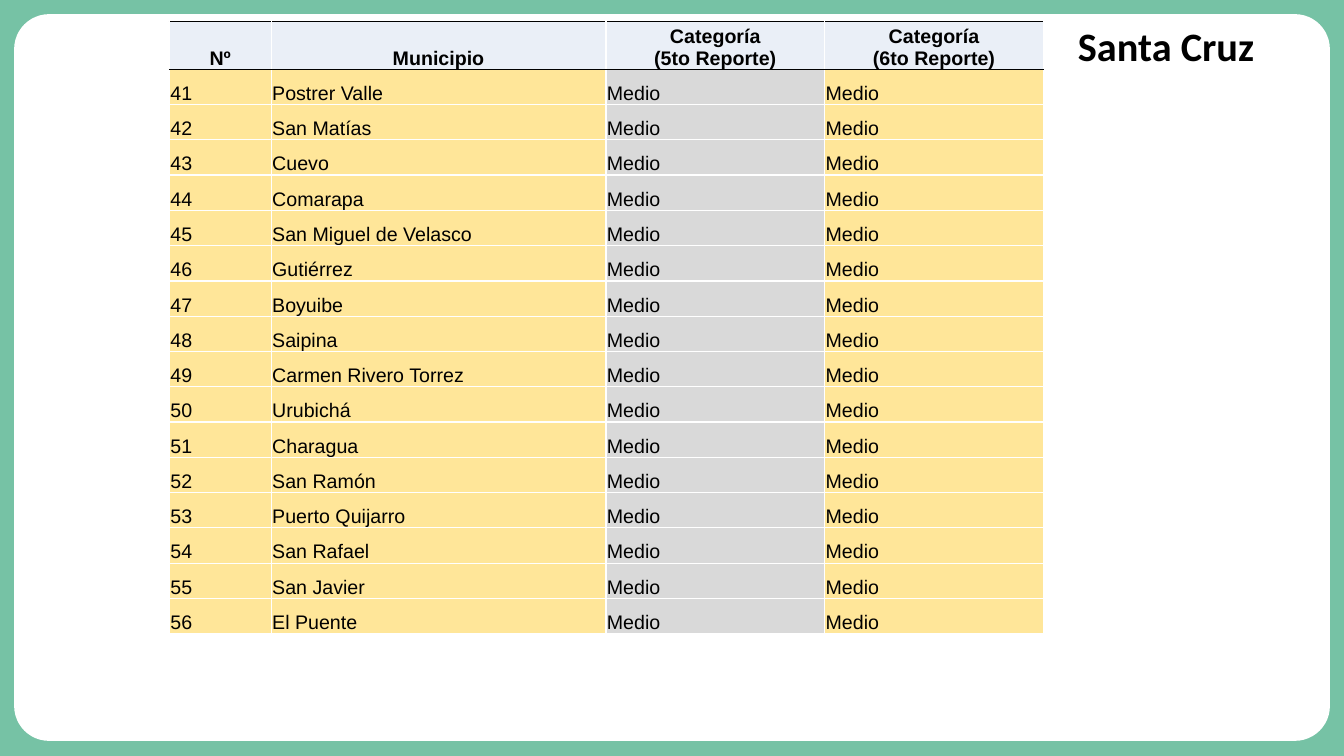
from lxml import etree
from pptx import Presentation
from pptx.dml.color import RGBColor
from pptx.enum.shapes import MSO_SHAPE
from pptx.enum.text import MSO_ANCHOR, PP_ALIGN
from pptx.oxml.ns import qn
from pptx.util import Inches, Pt

ROUNDED = MSO_SHAPE.ROUNDED_RECTANGLE
BOTTOM, MIDDLE = MSO_ANCHOR.BOTTOM, MSO_ANCHOR.MIDDLE
LEFT, CENTER = PP_ALIGN.LEFT, PP_ALIGN.CENTER

GREEN = RGBColor(0x76, 0xC2, 0xA5)
WHITE = RGBColor(0xFF, 0xFF, 0xFF)
BLACK = RGBColor(0x00, 0x00, 0x00)
PALE_BLUE = RGBColor(0xEA, 0xEF, 0xF7)
YELLOW = RGBColor(0xFF, 0xE6, 0x99)
GRAY = RGBColor(0xD9, 0xD9, 0xD9)

HEADERS = ["Nº", "Municipio", "Categoría\n(5to Reporte)", "Categoría\n(6to Reporte)"]
FIRST_NUMBER = 41
MUNICIPALITIES = [
    "Postrer Valle", "San Matías", "Cuevo", "Comarapa",
    "San Miguel de Velasco", "Gutiérrez", "Boyuibe", "Saipina",
    "Carmen Rivero Torrez", "Urubichá", "Charagua", "San Ramón",
    "Puerto Quijarro", "San Rafael", "San Javier", "El Puente",
]
COLUMN_WIDTHS = [1.01, 3.32, 2.17, 2.17]
COLUMN_FILLS = [YELLOW, YELLOW, GRAY, YELLOW]
HEADER_HEIGHT, ROW_HEIGHT = 0.44, 0.35


def add_text(para, text, font, size, bold, align):
    para.alignment = align
    span = para.add_run()
    span.text = text
    span.font.name = font
    span.font.size = Pt(size)
    span.font.bold = bold
    span.font.color.rgb = BLACK


def set_border(cell, side, color):
    line = etree.SubElement(cell._tc.get_or_add_tcPr(), qn(f"a:ln{side}"), w=str(Pt(1)))
    fill = etree.SubElement(line, qn("a:solidFill"))
    etree.SubElement(fill, qn("a:srgbClr"), val=str(color))


deck = Presentation()
deck.slide_width, deck.slide_height = Inches(13.33), Inches(7.5)
page = deck.slides.add_slide(deck.slide_layouts[6])

# Green background with a white rounded panel
page.background.fill.solid()
page.background.fill.fore_color.rgb = GREEN
panel = page.shapes.add_shape(ROUNDED, Inches(0.14), Inches(0.14), Inches(13.05), Inches(7.21))
panel.adjustments[0] = 0.048
panel.shadow.inherit = False
panel.fill.solid()
panel.fill.fore_color.rgb = WHITE
panel.line.fill.background()

# Title
title = page.shapes.add_textbox(Inches(10.34), Inches(0.21), Inches(2.45), Inches(0.55))
title.text_frame.word_wrap = True
title.text_frame.vertical_anchor = MIDDLE
title_para = title.text_frame.paragraphs[0]
title_para.line_spacing = 0.9
add_text(title_para, "Santa Cruz", "Calibri", 28.8, True, CENTER)

# Table of municipalities
rows = [HEADERS]
for number, name in enumerate(MUNICIPALITIES, FIRST_NUMBER):
    rows.append([str(number), name, "Medio", "Medio"])
table_height = HEADER_HEIGHT + ROW_HEIGHT * len(MUNICIPALITIES)
table = page.shapes.add_table(
    len(rows), len(HEADERS), Inches(1.68), Inches(0.21),
    Inches(sum(COLUMN_WIDTHS)), Inches(table_height)).table
table.horz_banding = False
for column, width in zip(table.columns, COLUMN_WIDTHS):
    column.width = Inches(width)

for r, texts in enumerate(rows):
    is_header = r == 0
    table.rows[r].height = Inches(HEADER_HEIGHT if is_header else ROW_HEIGHT)
    for c, text in enumerate(texts):
        cell = table.cell(r, c)
        cell.vertical_anchor = BOTTOM
        cell.margin_left = cell.margin_right = cell.margin_top = Inches(0.01)
        cell.margin_bottom = 0

        # Black rules above and below the header, white ones elsewhere
        set_border(cell, "L", WHITE)
        set_border(cell, "R", WHITE)
        set_border(cell, "T", BLACK if r <= 1 else WHITE)
        set_border(cell, "B", BLACK if is_header else WHITE)
        cell.fill.solid()
        cell.fill.fore_color.rgb = PALE_BLUE if is_header else COLUMN_FILLS[c]

        for i, line in enumerate(text.split("\n")):
            para = cell.text_frame.add_paragraph() if i else cell.text_frame.paragraphs[0]
            add_text(para, line, "Arial", 14, is_header, CENTER if is_header else LEFT)

deck.save("out.pptx")
